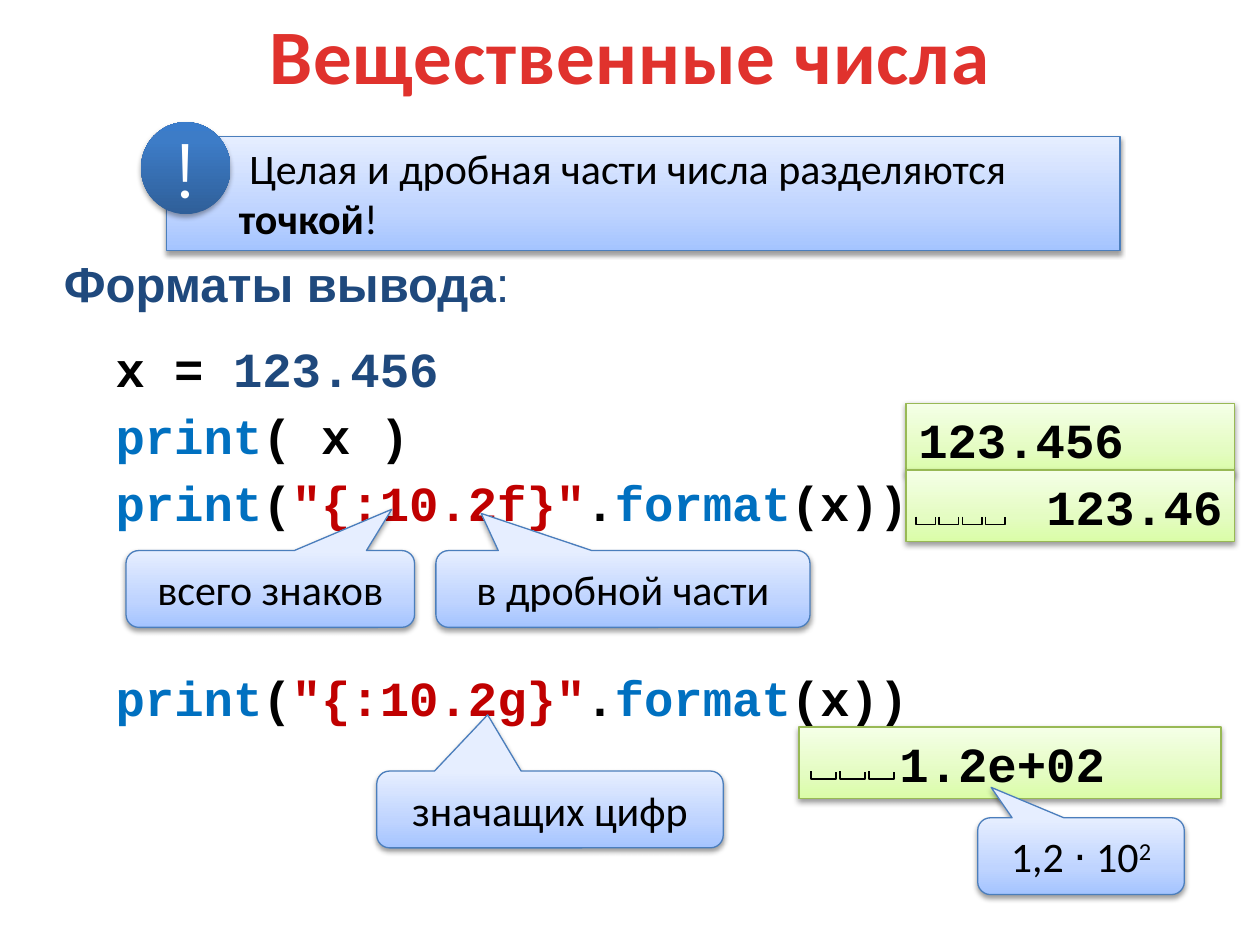
from lxml import etree
from pptx import Presentation
from pptx.dml.color import RGBColor
from pptx.enum.shapes import MSO_SHAPE
from pptx.enum.text import MSO_ANCHOR, PP_ALIGN
from pptx.oxml.ns import qn
from pptx.util import Pt

RECTANGLE, OVAL = MSO_SHAPE.RECTANGLE, MSO_SHAPE.OVAL
CALLOUT = MSO_SHAPE.ROUNDED_RECTANGULAR_CALLOUT
TOP, MIDDLE = MSO_ANCHOR.TOP, MSO_ANCHOR.MIDDLE
LEFT, CENTER, RIGHT = PP_ALIGN.LEFT, PP_ALIGN.CENTER, PP_ALIGN.RIGHT

COLORS = {
    "black": "000000", "white": "FFFFFF", "navy": "1F497D",
    "blue": "0070C0", "red": "C00000",
    "blue line": "4B7EBC", "green line": "98B955",
}
# Gradient stops (percent, colour), from the bottom of the shape to its top
BLUE = [(0, "A4C4FF"), (35, "BFD4FF"), (100, "E6EEFF")]
GREEN = [(0, "DAFDA7"), (35, "E4FCC2"), (100, "F5FFE7")]
BADGE = [(0, "2F5F99"), (80, "3D7CC7"), (100, "3A7CCB")]
TITLE = [(25, "E0322D"), (100, "A2201C")]
SANS, HEADING_FONT, CODE_FONT, BADGE_FONT = "Calibri", "Arial", "Courier New", "Montserrat"

TITLE_TEXT = "Вещественные числа"
# Runs: (text, colour, bold)
HEADING = [("Форматы вывода", "navy", True), (":", "navy", False)]
BANNER = [("Целая и дробная части числа разделяются ", "black", False),
          ("точкой", "black", True), ("!", "black", False)]


def format_call(pattern):
    return [("print", "blue", True), ("(", "black", True), (f'"{pattern}"', "red", True),
            (".", "black", True), ("format", "blue", True), ("(x))", "black", True)]


# Code blocks: (left, top, width, height), lines of runs
CODE_BLOCKS = [
    ((59, 185, 484.5, 123), [
        [("x = ", "black", True), ("123.456", "navy", True)],
        [("print", "blue", True), ("( x )", "black", True)],
        format_call("{:10.2f}"),
    ]),
    ((59, 373, 497.5, 46), [format_call("{:10.2g}")]),
]
# Outputs: box, text, alignment, indent, blank marks (count, left, top, width, pitch)
OUTPUTS = [
    ((517.7, 230.4, 188, 41), "123.456", LEFT, 0, None),
    ((517.7, 268.6, 188, 41), "123.46", RIGHT, 0, (4, 523.6, 295.2, 11, 13.2)),
    ((456.5, 415.4, 241.2, 41), "1.2e+02", LEFT, 50.4, (3, 463.5, 440.6, 14.2, 16.6)),
]
# Callouts: box, pointer (x, y), text, superscript
CALLOUTS = [
    ((72, 314.6, 164.9, 43.9), (0.421, -1.037), "всего знаков", ""),
    ((249.1, 314.6, 213.8, 43.9), (-0.379, -0.983), "в дробной части", ""),
    ((215.3, 440.6, 198, 43.9), (-0.18, -1.232), "значащих цифр", ""),
    ((558.7, 467.3, 118.1, 43.9), (-0.435, -0.896), "1,2 ⋅ 10", "2"),
]


def rgb(name):
    return RGBColor.from_string(COLORS[name])


def paint_gradient(fill, properties, stops, angle):
    """Fill with any number of stops; the angle runs counter-clockwise."""
    fill.gradient()
    fill.gradient_angle = angle
    stop_list = properties.find(qn("a:gradFill")).find(qn("a:gsLst"))
    for stop in list(stop_list):
        stop_list.remove(stop)
    for percent, color in stops:
        stop = etree.SubElement(stop_list, qn("a:gs"), pos=str(percent * 1000))
        etree.SubElement(stop, qn("a:srgbClr"), val=color)


def add_shadow(shape, opacity):
    shape.shadow.inherit = False
    effects = shape._element.spPr.find(qn("a:effectLst"))
    shadow = etree.SubElement(effects, qn("a:outerShdw"), blurRad=str(Pt(3.1)),
                              dist=str(Pt(1.6)), dir="5400000", rotWithShape="0")
    color = etree.SubElement(shadow, qn("a:srgbClr"), val=COLORS["black"])
    etree.SubElement(color, qn("a:alpha"), val=str(opacity * 1000))


def add_runs(paragraph, runs, font_name, size):
    for text, color, bold in runs:
        run = paragraph.add_run()
        run.text = text
        run.font.name, run.font.size, run.font.bold = font_name, Pt(size), bold
        run.font.color.rgb = rgb(color)


def add_panel(slide, kind, box, stops, line, anchor=TOP, align=LEFT):
    shape = slide.shapes.add_shape(kind, *map(Pt, box))
    paint_gradient(shape.fill, shape._element.spPr, stops, 90)
    if line:
        shape.line.color.rgb = rgb(line)
        shape.line.width = Pt(0.75)
    else:
        shape.line.fill.background()
    add_shadow(shape, 38 if line else 35)
    shape.text_frame.word_wrap = True
    shape.text_frame.vertical_anchor = anchor
    paragraph = shape.text_frame.paragraphs[0]
    paragraph.alignment = align
    return shape, paragraph


def indent(paragraph, left, first_line=0):
    properties = paragraph._p.get_or_add_pPr()
    properties.set("marL", str(Pt(left)))
    properties.set("indent", str(Pt(first_line)))


def add_blank_marks(slide, count, left, top, width, pitch):
    """Draw a row of open brackets, one for each leading blank."""
    for index in range(count):
        x = left + index * pitch
        points = [(x, top + 4.5), (x + width, top + 4.5), (x + width, top + 0.5)]
        builder = slide.shapes.build_freeform(Pt(x), Pt(top))
        builder.add_line_segments([(Pt(a), Pt(b)) for a, b in points], close=False)
        mark = builder.convert_to_shape()
        mark.fill.background()
        mark.line.color.rgb = rgb("black")
        mark.line.width = Pt(1)
        mark.shadow.inherit = False


def add_title(slide):
    title = slide.shapes.title
    title.left, title.top, title.width, title.height = map(Pt, (0, 0, 720, 61.2))
    title.text_frame.vertical_anchor = MIDDLE
    paragraph = title.text_frame.paragraphs[0]
    paragraph.alignment = CENTER
    run = paragraph.add_run()
    run.text = TITLE_TEXT
    run.font.name, run.font.size, run.font.bold = SANS, Pt(44), True
    properties = run._r.get_or_add_rPr()
    properties.set("spc", "50")
    paint_gradient(run.font.fill, properties, TITLE, 270)


def add_banner(slide):
    _, paragraph = add_panel(slide, RECTANGLE, (95, 77.8, 545, 65.5), BLUE, "blue line")
    indent(paragraph, 34.5, 6)
    add_runs(paragraph, BANNER, SANS, 24)
    badge, paragraph = add_panel(slide, OVAL, (80.6, 69.8, 51.1, 52.6), BADGE, None,
                                 MIDDLE, CENTER)
    badge.text_frame.word_wrap = False
    add_runs(paragraph, [("!", "white", False)], BADGE_FONT, 44)


def add_text(slide, box, lines, font_name, line_spacing, wrap):
    frame = slide.shapes.add_textbox(*map(Pt, box)).text_frame
    frame.word_wrap = wrap
    for index, runs in enumerate(lines):
        paragraph = frame.add_paragraph() if index else frame.paragraphs[0]
        paragraph.line_spacing = line_spacing
        add_runs(paragraph, runs, font_name, 28)


def main():
    presentation = Presentation()
    presentation.slide_width, presentation.slide_height = Pt(720), Pt(540)
    slide = presentation.slides.add_slide(presentation.slide_layouts[5])
    add_title(slide)
    add_banner(slide)
    add_text(slide, (29.5, 141.1, 273.6, 41), [HEADING], HEADING_FONT, 1.0, False)
    for box, lines in CODE_BLOCKS:
        add_text(slide, box, lines, CODE_FONT, 1.14, True)
    for box, text, align, left, marks in OUTPUTS:
        _, paragraph = add_panel(slide, RECTANGLE, box, GREEN, "green line", align=align)
        indent(paragraph, left)
        add_runs(paragraph, [(text, "black", True)], CODE_FONT, 28)
        if marks:
            add_blank_marks(slide, *marks)
    for box, pointer, text, superscript in CALLOUTS:
        shape, paragraph = add_panel(slide, CALLOUT, box, BLUE, "blue line", MIDDLE, CENTER)
        shape.adjustments[0], shape.adjustments[1] = pointer
        add_runs(paragraph, [(text, "black", False)], SANS, 24)
        if superscript:
            add_runs(paragraph, [(superscript, "black", False)], SANS, 24)
            paragraph.runs[-1]._r.get_or_add_rPr().set("baseline", "30000")
    presentation.save("out.pptx")


if __name__ == "__main__":
    main()
